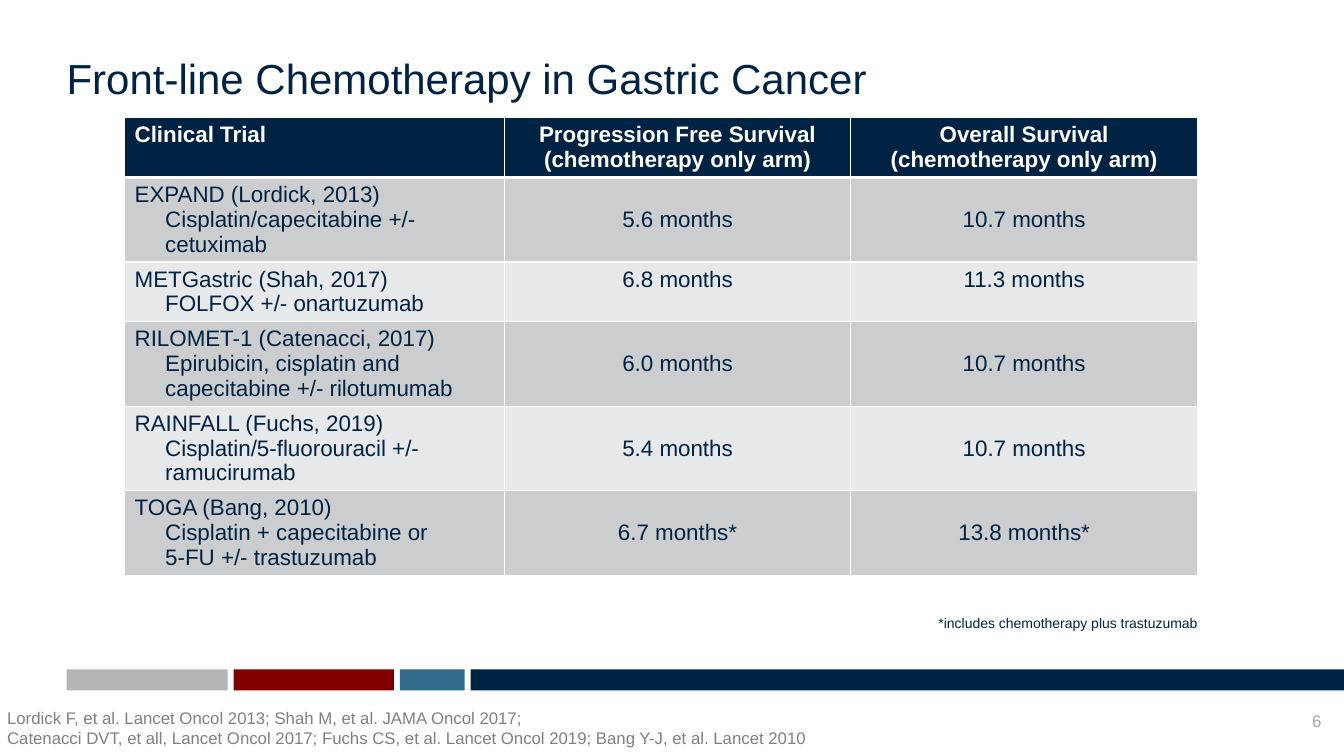
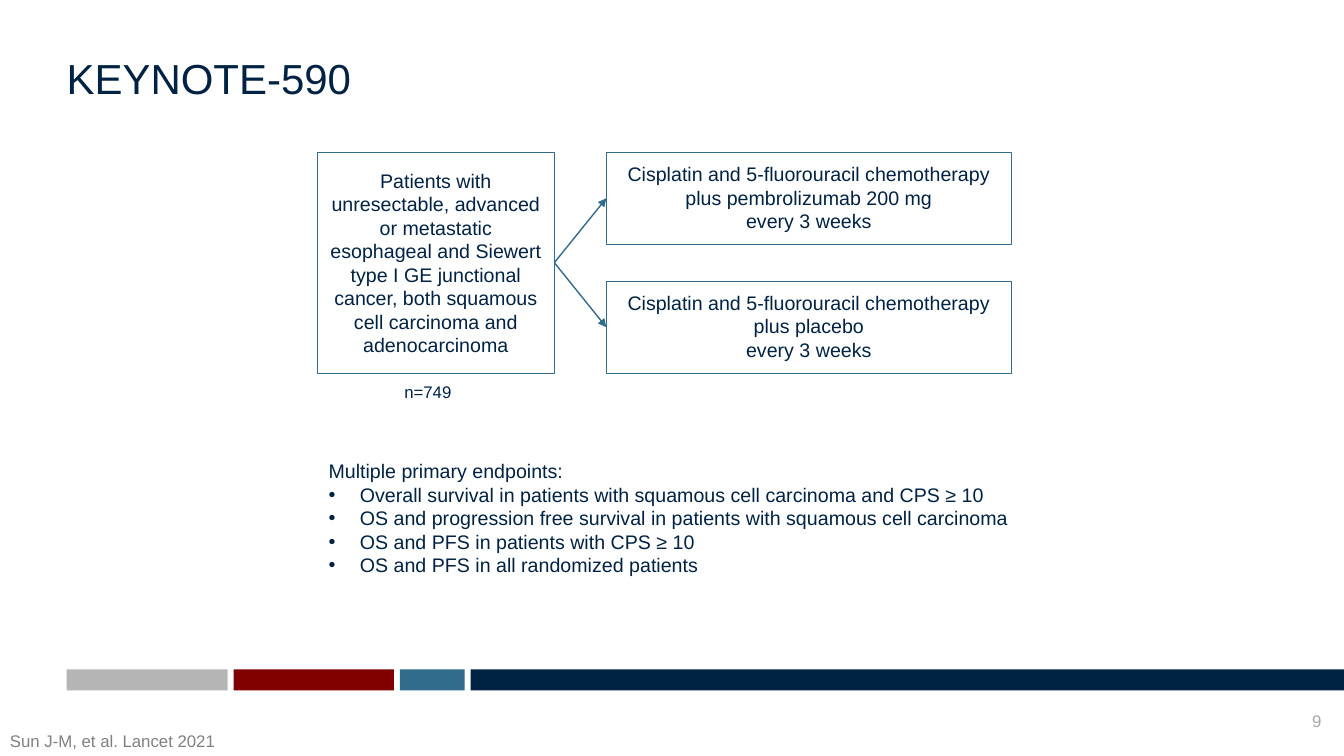
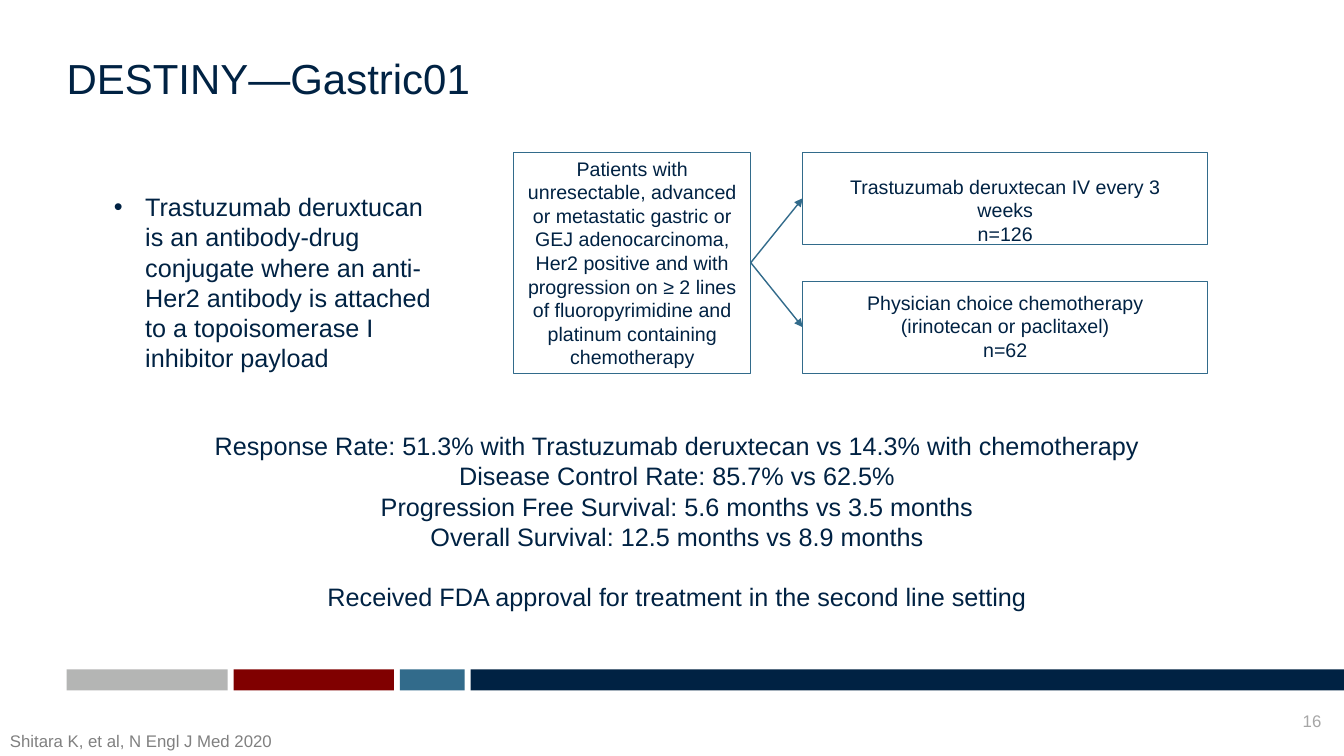
from lxml.etree import SubElement
from pptx import Presentation
from pptx.dml.color import RGBColor
from pptx.enum.shapes import MSO_CONNECTOR as Link, MSO_SHAPE as Shape
from pptx.enum.text import MSO_ANCHOR as Anchor, PP_ALIGN as Align
from pptx.oxml.ns import qn
from pptx.util import Cm, Pt

NAVY = RGBColor(0x00, 0x22, 0x43)
TEAL = RGBColor(0x32, 0x6B, 0x8B)
MAROON = RGBColor(0x80, 0x00, 0x00)
SILVER = RGBColor(0xB4, 0xB5, 0xB4)
CITE_GRAY = RGBColor(0x80, 0x80, 0x80)
NUMBER_GRAY = RGBColor(0xA6, 0xA6, 0xA6)
ROW_DARK = RGBColor(0xCC, 0xCD, 0xCF)
ROW_LIGHT = RGBColor(0xE7, 0xE8, 0xE9)
WHITE = RGBColor(0xFF, 0xFF, 0xFF)

FONT = "Arial"
SLIDE_WIDTH, SLIDE_HEIGHT = 33.87, 19.05
MARGIN = 1.68
HANGING = 0.79
BANDS = [(4.06, SILVER), (4.04, MAROON), (1.63, TEAL), (None, NAVY)]


def write(frame, lines, size, color=NAVY, align=Align.LEFT, bold=False, pitch=1.2):
    frame.word_wrap = True
    frame.text = "\n".join(lines)
    for paragraph in frame.paragraphs:
        paragraph.alignment = align
        paragraph.line_spacing = Pt(round(size * pitch, 1))
        for run in paragraph.runs:
            run.font.name = FONT
            run.font.size = Pt(size)
            run.font.bold = bold
            run.font.color.rgb = color


def set_insets(frame, left=0, top=0, right=0, bottom=0):
    frame.margin_left, frame.margin_top = Cm(left), Cm(top)
    frame.margin_right, frame.margin_bottom = Cm(right), Cm(bottom)


def add_text(slide, box, lines, size, anchor=Anchor.TOP, **style):
    frame = slide.shapes.add_textbox(*map(Cm, box)).text_frame
    set_insets(frame)
    frame.vertical_anchor = anchor
    write(frame, lines, size, **style)
    return frame


def add_bullets(paragraphs):
    for paragraph in paragraphs:
        properties = paragraph._p.get_or_add_pPr()
        properties.set("marL", str(Cm(HANGING)))
        properties.set("indent", str(-Cm(HANGING)))
        SubElement(properties, qn("a:buFont"), typeface=FONT)
        SubElement(properties, qn("a:buChar"), char="•")


def add_rect(slide, box):
    rect = slide.shapes.add_shape(Shape.RECTANGLE, *map(Cm, box))
    rect.shadow.inherit = False
    return rect


def add_bands(slide, box):
    left, top, width, height = box
    right = left + width
    for band_width, color in BANDS:
        band_width = band_width or right - left
        band = add_rect(slide, (left, top, band_width, height))
        band.fill.solid()
        band.fill.fore_color.rgb = color
        band.line.fill.background()
        left += band_width + 0.15


def add_framed_slide(deck, title, number, citation, citation_box):
    slide = deck.slides.add_slide(deck.slide_layouts[6])
    add_bands(slide, (MARGIN, 16.87, SLIDE_WIDTH - MARGIN, 0.53))
    add_text(slide, (MARGIN, 1.32, 30.76, 1.27), [title], 30)
    add_text(slide, (32.44, 17.91, 0.86, 0.51), [number], 12, Anchor.BOTTOM,
             color=NUMBER_GRAY, align=Align.RIGHT)
    add_text(slide, citation_box, citation, 12, Anchor.BOTTOM, color=CITE_GRAY)
    return slide


def set_borders(cell, top=1, bottom=1):
    properties = cell._tc.get_or_add_tcPr()
    for side, points in (("L", 1), ("R", 1), ("T", top), ("B", bottom)):
        edge = SubElement(properties, qn(f"a:ln{side}"), w=str(Pt(points)))
        fill = SubElement(edge, qn("a:solidFill"))
        SubElement(fill, qn("a:srgbClr"), val=str(WHITE))


def add_trial_table(slide, box, column_widths, header, trials):
    rows = [([header[0]], *header[1:])] + trials
    table = slide.shapes.add_table(len(rows), len(header), *map(Cm, box)).table
    for column, width in zip(table.columns, column_widths):
        column.width = Cm(width)
    for r, (trial, *survivals) in enumerate(rows):
        is_header = r == 0
        tall = len(trial) == 3
        table.rows[r].height = Cm(2.13 if tall else 1.5)
        shade = NAVY if is_header else ROW_DARK if r % 2 else ROW_LIGHT
        for c, lines in enumerate([trial] + [[value] for value in survivals]):
            cell = table.cell(r, c)
            write(cell.text_frame, lines, 16, WHITE if is_header else NAVY,
                  Align.CENTER if c else Align.LEFT, is_header, 1.106)
            for regimen in cell.text_frame.paragraphs[1:]:
                regimen._p.get_or_add_pPr().set("marL", str(Cm(0.77)))
            cell.vertical_anchor = Anchor.MIDDLE if c and tall else Anchor.TOP
            set_borders(cell, top=3 if r == 1 else 1, bottom=3 if is_header else 1)
            cell.fill.solid()
            cell.fill.fore_color.rgb = shade


def add_outlined_box(slide, box, lines, anchor, side_inset, top_inset=0):
    outlined = add_rect(slide, box)
    outlined.fill.background()
    outlined.line.color.rgb = TEAL
    outlined.line.width = Pt(0.5)
    frame = outlined.text_frame
    set_insets(frame, side_inset, top_inset, side_inset)
    frame.vertical_anchor = anchor
    write(frame, lines, 14, align=Align.CENTER)
    return outlined


def add_arrow(slide, source, target):
    arrow = slide.shapes.add_connector(Link.STRAIGHT, 0, 0, 0, 0)
    arrow.begin_connect(source, 3)
    arrow.end_connect(target, 1)
    arrow.line.color.rgb = TEAL
    arrow.line.width = Pt(1)
    SubElement(arrow.line._get_or_add_ln(), qn("a:tailEnd"), type="triangle")
    SubElement(arrow._element.spPr, qn("a:effectLst"))


def add_trial_design(slide, box, population, arms):
    left, top, width, height = box
    patient_width, gap, arm_height = 5.97, 1.31, 2.31
    patients = add_outlined_box(slide, (left, top, patient_width, height),
                                [population], Anchor.MIDDLE, 0.25)
    arm_left = left + patient_width + gap
    arm_step = (height - arm_height) / (len(arms) - 1)
    for i, (lines, top_inset) in enumerate(arms):
        arm_box = (arm_left, top + i * arm_step, left + width - arm_left, arm_height)
        arm = add_outlined_box(slide, arm_box, lines, Anchor.TOP, 0.44, top_inset)
        add_arrow(slide, patients, arm)


def build_chemotherapy(deck):
    slide = add_framed_slide(
        deck, "Front-line Chemotherapy in Gastric Cancer", "6",
        ["Lordick F, et al. Lancet Oncol 2013; Shah M, et al. JAMA Oncol 2017;",
         "Catenacci DVT, et all, Lancet Oncol 2017; Fuchs CS, et al. Lancet Oncol 2019; "
         "Bang Y-J, et al. Lancet 2010"],
        (0.18, 17.83, 22, 1.02))
    header = ["Clinical Trial",
              "Progression Free Survival (chemotherapy only arm)",
              "Overall Survival (chemotherapy only arm)"]
    trials = [
        (["EXPAND (Lordick, 2013)", "Cisplatin/capecitabine +/-", "cetuximab"],
         "5.6 months", "10.7 months"),
        (["METGastric (Shah, 2017)", "FOLFOX +/- onartuzumab"],
         "6.8 months", "11.3 months"),
        (["RILOMET-1 (Catenacci, 2017)", "Epirubicin, cisplatin and",
          "capecitabine +/- rilotumumab"],
         "6.0 months", "10.7 months"),
        (["RAINFALL (Fuchs, 2019)", "Cisplatin/5-fluorouracil +/-", "ramucirumab"],
         "5.4 months", "10.7 months"),
        (["TOGA (Bang, 2010)", "Cisplatin + capecitabine or", "5-FU +/- trastuzumab"],
         "6.7 months*", "13.8 months*"),
    ]
    add_trial_table(slide, (3.14, 2.97, 27.05, 11.52), (9.58, 8.71, 8.76),
                    header, trials)
    add_text(slide, (23.65, 15.47, 7, 0.43),
             ["*includes chemotherapy plus trastuzumab"], 10, Anchor.BOTTOM)


def build_keynote(deck):
    slide = add_framed_slide(deck, "KEYNOTE-590", "9", ["Sun J-M, et al. Lancet 2021"],
                             (0.25, 18.41, 10, 0.51))
    add_trial_design(
        slide, (8, 3.84, 17.49, 5.56),
        "Patients with unresectable, advanced or metastatic esophageal and Siewert "
        "type I GE junctional cancer, both squamous cell carcinoma and adenocarcinoma",
        [(["Cisplatin and 5-fluorouracil chemotherapy plus pembrolizumab 200 mg",
           "every 3 weeks"], 0.24),
         (["Cisplatin and 5-fluorouracil chemotherapy plus placebo",
           "every 3 weeks"], 0.24)])
    add_text(slide, (10.19, 9.63, 2, 0.51), ["n=749"], 12)
    endpoints = add_text(
        slide, (8.28, 11.53, 18, 3),
        ["Multiple primary endpoints:",
         "Overall survival in patients with squamous cell carcinoma and CPS ≥ 10",
         "OS and progression free survival in patients with squamous cell carcinoma",
         "OS and PFS in patients with CPS ≥ 10",
         "OS and PFS in all randomized patients"], 14, Anchor.BOTTOM)
    add_bullets(endpoints.paragraphs[1:])


def build_destiny(deck):
    slide = add_framed_slide(deck, "DESTINY—Gastric01", "16",
                             ["Shitara K, et al, N Engl J Med 2020"],
                             (0.25, 18.41, 10, 0.51))
    add_trial_design(
        slide, (12.95, 3.84, 17.49, 5.56),
        "Patients with unresectable, advanced or metastatic gastric or GEJ "
        "adenocarcinoma, Her2 positive and with progression on ≥ 2 lines of "
        "fluoropyrimidine and platinum containing chemotherapy",
        [(["Trastuzumab deruxtecan IV every 3 weeks", "n=126"], 0.56),
         (["Physician choice chemotherapy (irinotecan or paclitaxel)", "n=62"], 0.24)])
    results = add_text(
        slide, (4.81, 10.8, 24.5, 4.62),
        ["Response Rate: 51.3% with Trastuzumab deruxtecan vs 14.3% with chemotherapy",
         "Disease Control Rate: 85.7% vs 62.5%",
         "Progression Free Survival: 5.6 months vs 3.5 months",
         "Overall Survival: 12.5 months vs 8.9 months",
         "Received FDA approval for treatment in the second line setting"],
        18, Anchor.BOTTOM, align=Align.CENTER)
    results.paragraphs[-1].space_before = Pt(21.6)
    mechanism = add_text(
        slide, (2.87, 4.78, 8.36, 4.62),
        ["Trastuzumab deruxtucan is an antibody-drug conjugate where an anti-Her2 "
         "antibody is attached to a topoisomerase I inhibitor payload"],
        18, Anchor.BOTTOM)
    add_bullets(mechanism.paragraphs)


def main():
    deck = Presentation()
    deck.slide_width, deck.slide_height = Cm(SLIDE_WIDTH), Cm(SLIDE_HEIGHT)
    build_chemotherapy(deck)
    build_keynote(deck)
    build_destiny(deck)
    deck.save("out.pptx")


if __name__ == "__main__":
    main()
